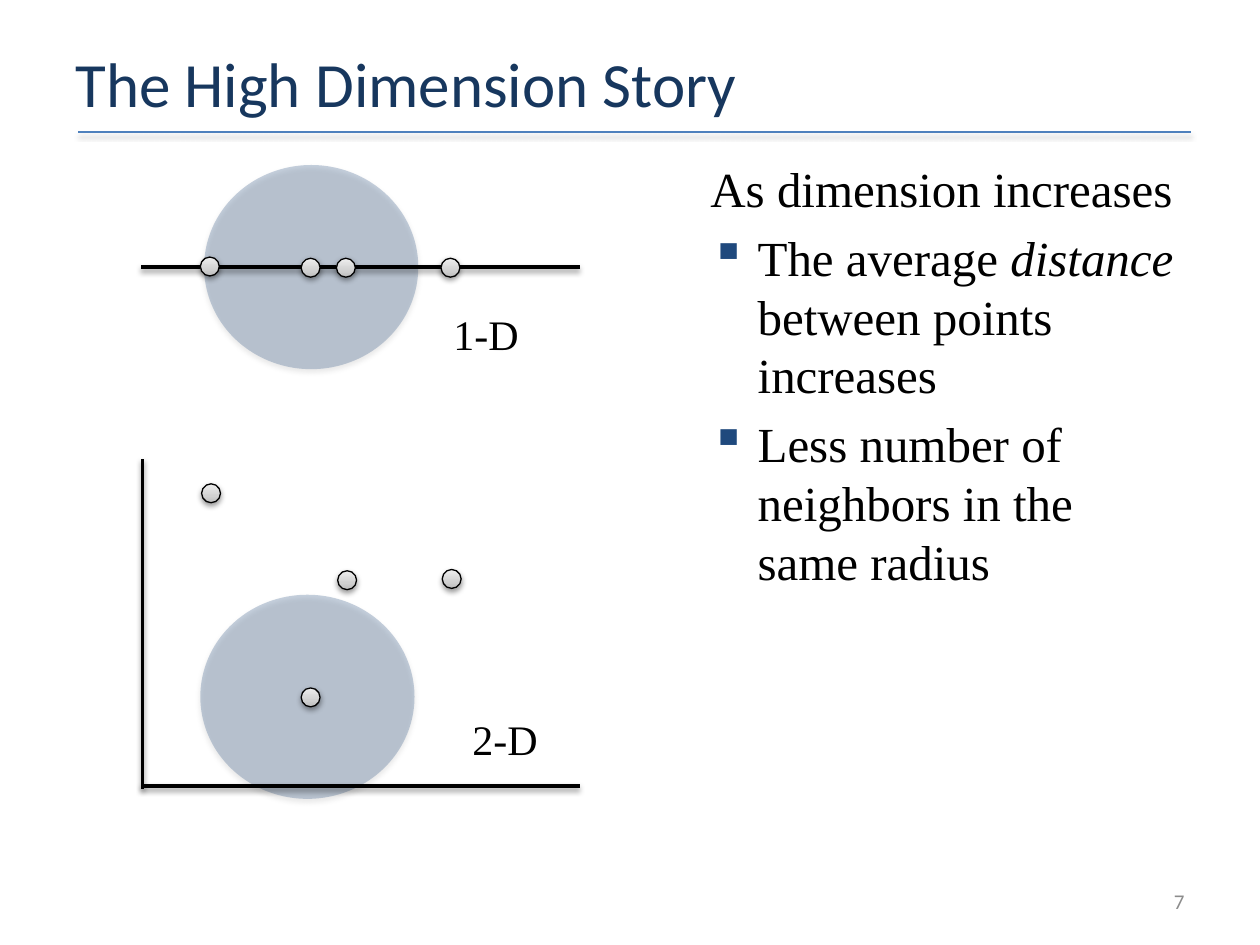
import copy
from typing import NamedTuple

import pptx
import pptx.dml.color
import pptx.enum.shapes
import pptx.enum.text
import pptx.oxml
import pptx.oxml.ns
import pptx.util
from pptx.util import Pt

RGBColor = pptx.dml.color.RGBColor
Align = pptx.enum.text.PP_ALIGN
Anchor = pptx.enum.text.MSO_ANCHOR
BLACK = RGBColor(0x00, 0x00, 0x00)
NAVY = RGBColor(0x1F, 0x49, 0x7D)
TITLE_BLUE = RGBColor(0x17, 0x37, 0x5E)
RULE_BLUE = RGBColor(0x4F, 0x81, 0xBD)
PAGE_GREY = RGBColor(0x8C, 0x8C, 0x8C)
DOT_GREYS = [(0, RGBColor(0xBD, 0xBD, 0xBD)), (0.35, RGBColor(0xD1, 0xD1, 0xD1)),
             (1, RGBColor(0xEE, 0xEE, 0xEE))]
SERIF, SANS = "Times New Roman", "Calibri"
DOT_SIZE = 10.8
NEIGHBORHOOD_SIZE = (122.4, 116.64)


class Point(NamedTuple):
    x: float
    y: float


class Box(NamedTuple):
    left: float
    top: float
    width: float
    height: float


class Style(NamedTuple):
    font: str
    size: float
    color: RGBColor


class Plot(NamedTuple):
    axes: list[tuple[Point, Point]]
    neighborhood: Point
    dots: list[Point]
    label: str
    label_box: Box


def add_shadow(shape, alpha: int = 38, distance: float = 1.6) -> None:
    """Put a soft black shadow straight below the shape."""
    shape._element.spPr.append(pptx.oxml.parse_xml(
        f'<a:effectLst {pptx.oxml.ns.nsdecls("a")}>'
        f'<a:outerShdw blurRad="{Pt(3.1)}" dist="{Pt(distance)}" dir="5400000" rotWithShape="0">'
        f'<a:srgbClr val="000000"><a:alpha val="{alpha * 1000}"/></a:srgbClr>'
        '</a:outerShdw></a:effectLst>'))


def add_line(slide, start: Point, end: Point, color: RGBColor, width: float) -> None:
    line = slide.shapes.add_connector(
        pptx.enum.shapes.MSO_CONNECTOR.STRAIGHT, *map(Pt, (*start, *end)))
    line.line.color.rgb = color
    line.line.width = Pt(width)
    add_shadow(line)


def add_ellipse(slide, box: Box):
    return slide.shapes.add_shape(pptx.enum.shapes.MSO_SHAPE.OVAL, *map(Pt, box))


def add_neighborhood(slide, corner: Point) -> None:
    circle = add_ellipse(slide, Box(*corner, *NEIGHBORHOOD_SIZE))
    circle.fill.solid()
    circle.fill.fore_color.rgb = NAVY
    circle.line.fill.background()
    color = circle._element.spPr.find(".//" + pptx.oxml.ns.qn("a:srgbClr"))
    color.append(pptx.oxml.parse_xml(
        f'<a:alpha {pptx.oxml.ns.nsdecls("a")} val="25000"/>'))
    add_shadow(circle, 35, 1.8)


def add_dot(slide, corner: Point) -> None:
    dot = add_ellipse(slide, Box(*corner, DOT_SIZE, DOT_SIZE))
    dot.fill.gradient()
    dot.fill.gradient_angle = 90
    stop_list = dot._element.spPr.find(".//" + pptx.oxml.ns.qn("a:gsLst"))
    stop_list.insert(1, copy.deepcopy(stop_list[0]))
    for stop, (position, grey) in zip(dot.fill.gradient_stops, DOT_GREYS):
        stop.position = position
        stop.color.rgb = grey
    dot.line.color.rgb = BLACK
    dot.line.width = Pt(0.75)
    add_shadow(dot)


def add_frame(slide, box: Box, anchor=Anchor.TOP):
    frame = slide.shapes.add_textbox(*map(Pt, box)).text_frame
    frame.word_wrap = True
    frame.vertical_anchor = anchor
    return frame


def add_run(paragraph, text: str, style: Style, italic: bool = False) -> None:
    run = paragraph.add_run()
    run.text = text
    run.font.name = style.font
    run.font.size = Pt(style.size)
    run.font.color.rgb = style.color
    if italic:
        run.font.italic = True


def add_label(slide, box: Box, text: str, style: Style,
              anchor=Anchor.TOP, align=Align.LEFT) -> None:
    paragraph = add_frame(slide, box, anchor).paragraphs[0]
    paragraph.alignment = align
    add_run(paragraph, text, style)


def add_bullet(paragraph) -> None:
    properties = paragraph._p.get_or_add_pPr()
    properties.set("marL", str(Pt(27)))
    properties.set("indent", str(Pt(-27)))
    namespace = pptx.oxml.ns.nsdecls("a")
    properties.append(pptx.oxml.parse_xml(
        f'<a:buClr {namespace}><a:srgbClr val="{NAVY}"/></a:buClr>'))
    properties.append(pptx.oxml.parse_xml(f'<a:buChar {namespace} char="▪"/>'))


def add_story(slide) -> None:
    style = Style(SERIF, 28, BLACK)
    frame = add_frame(slide, Box(398.88, 87.12, 285.12, 395.28))
    heading = frame.paragraphs[0]
    add_run(heading, "As dimension increases", style)
    distance = frame.add_paragraph()
    add_run(distance, "The average ", style)
    add_run(distance, "distance ", style, italic=True)
    add_run(distance, "between points increases", style)
    neighbors = frame.add_paragraph()
    add_run(neighbors, "Less number of neighbors in the same radius", style)
    for paragraph in frame.paragraphs:
        paragraph.space_before = Pt(5.6)
    for paragraph in (distance, neighbors):
        add_bullet(paragraph)


def add_plot(slide, plot: Plot) -> None:
    add_neighborhood(slide, plot.neighborhood)
    for start, end in plot.axes:
        add_line(slide, start, end, BLACK, 2)
    for corner in plot.dots:
        add_dot(slide, corner)
    add_label(slide, plot.label_box, plot.label, Style(SERIF, 24, BLACK))


PLOTS = [
    Plot([(Point(80.64, 152.64), Point(331.2, 152.64))],
         Point(116.64, 94.32),
         [Point(114.48, 146.88), Point(192.24, 147.6),
          Point(172.08, 147.6), Point(252, 147.6)],
         "1-D", Box(252, 172.8, 61.92, 36)),
    Plot([(Point(80.64, 449.28), Point(331.2, 449.28)),
          (Point(81.36, 450.72), Point(81.36, 262.08))],
         Point(114.48, 339.84),
         [Point(115.2, 276.48), Point(172.08, 393.12),
          Point(192.96, 326.16), Point(252.72, 325.44)],
         "2-D", Box(262.8, 403.92, 61.92, 36)),
]


def main() -> None:
    deck = pptx.Presentation()
    deck.slide_width, deck.slide_height = Pt(720), Pt(540)
    slide = deck.slides.add_slide(deck.slide_layouts[6])
    add_line(slide, Point(44.64, 75.6), Point(680.4, 75.6), RULE_BLUE, 1)
    add_label(slide, Box(36, 21.6, 648, 51.12), "The High Dimension Story",
              Style(SANS, 36, TITLE_BLUE), Anchor.MIDDLE)
    add_story(slide)
    for plot in PLOTS:
        add_plot(slide, plot)
    add_label(slide, Box(516.24, 500.4, 167.76, 28.8), "7",
              Style(SANS, 12, PAGE_GREY), Anchor.MIDDLE, Align.RIGHT)
    deck.save("out.pptx")


if __name__ == "__main__":
    main()
